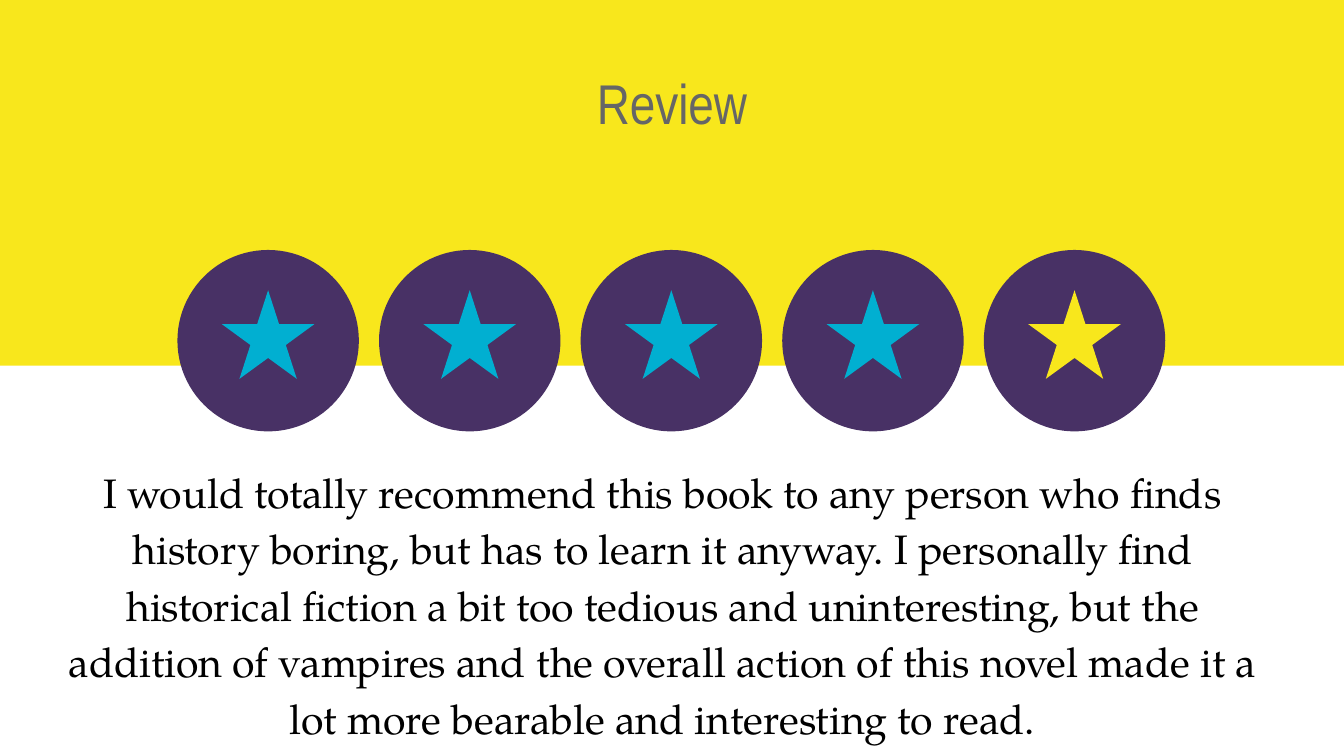
from lxml import etree
from pptx import Presentation
from pptx.dml.color import RGBColor
from pptx.enum.shapes import MSO_SHAPE
from pptx.enum.text import MSO_ANCHOR, MSO_AUTO_SIZE, PP_ALIGN
from pptx.oxml.ns import qn
from pptx.util import Inches, Pt

COLORS = {
    "yellow": "F8E71C",
    "purple": "483165",
    "blue": "01AFD1",
    "gray": "666666",
    "black": "000000",
}


def add_filled(shapes, kind, box, color):
    shape = shapes.add_shape(kind, *[Inches(length) for length in box])
    shape.fill.solid()
    shape.fill.fore_color.rgb = RGBColor.from_string(COLORS[color])
    shape.line.fill.background()
    shape.shadow.inherit = False
    return shape


def write_text(placeholder, box, text, font_name, size, color):
    placeholder.left, placeholder.top, placeholder.width, placeholder.height = [
        Inches(length) for length in box]
    frame = placeholder.text_frame
    frame.word_wrap = True
    frame.auto_size = MSO_AUTO_SIZE.NONE
    frame.vertical_anchor = MSO_ANCHOR.TOP
    frame.margin_left = frame.margin_right = Inches(0.1)
    frame.margin_top = frame.margin_bottom = Inches(0.1)
    paragraph = frame.paragraphs[0]
    paragraph.alignment = PP_ALIGN.CENTER
    paragraph.space_before = Pt(0)
    run = paragraph.add_run()
    run.text = text
    run.font.name = font_name
    run.font.size = Pt(size)
    run.font.color.rgb = RGBColor.from_string(COLORS[color])
    return paragraph


# 16:9 slide
prs = Presentation()
prs.slide_width = Inches(10)
prs.slide_height = Inches(10 * 9 / 16)
slide = prs.slides.add_slide(prs.slide_layouts[1])

# Yellow band behind the title
band = add_filled(slide.shapes, MSO_SHAPE.RECTANGLE, (0, 0, 10.02, 2.72), "yellow")
slide.shapes.title._element.addprevious(band._element)

# Title
write_text(slide.shapes.title, (0.34, 0.41, 9.32, 0.8),
           "Review", "Arial Narrow", 30, "gray")

# Star rating: four blue stars, the last one yellow
for index, star_color in enumerate(["blue"] * 4 + ["yellow"]):
    left = 1.32 + 1.5 * index
    badge = slide.shapes.add_group_shape()
    add_filled(badge.shapes, MSO_SHAPE.OVAL, (left, 1.86, 1.35, 1.35), "purple")
    add_filled(badge.shapes, MSO_SHAPE.STAR_5_POINT,
               (left + 0.33, 2.16, 0.69, 0.66), star_color)

# Review text
review = write_text(
    slide.placeholders[1], (0.27, 3.32, 9.32, 2.3),
    "I would totally recommend this book to any person who finds history boring, "
    "but has to learn it anyway. I personally find historical fiction a bit too "
    "tedious and uninteresting, but the addition of vampires and the overall action "
    "of this novel made it a lot more bearable and interesting to read.",
    "TeX Gyre Pagella", 22, "black")
review.line_spacing = 1.15
review.space_after = Pt(16)
properties = review._p.get_or_add_pPr()
properties.set("marL", "0")
properties.set("indent", "0")
etree.SubElement(properties, qn("a:buNone"))

prs.save("out.pptx")
